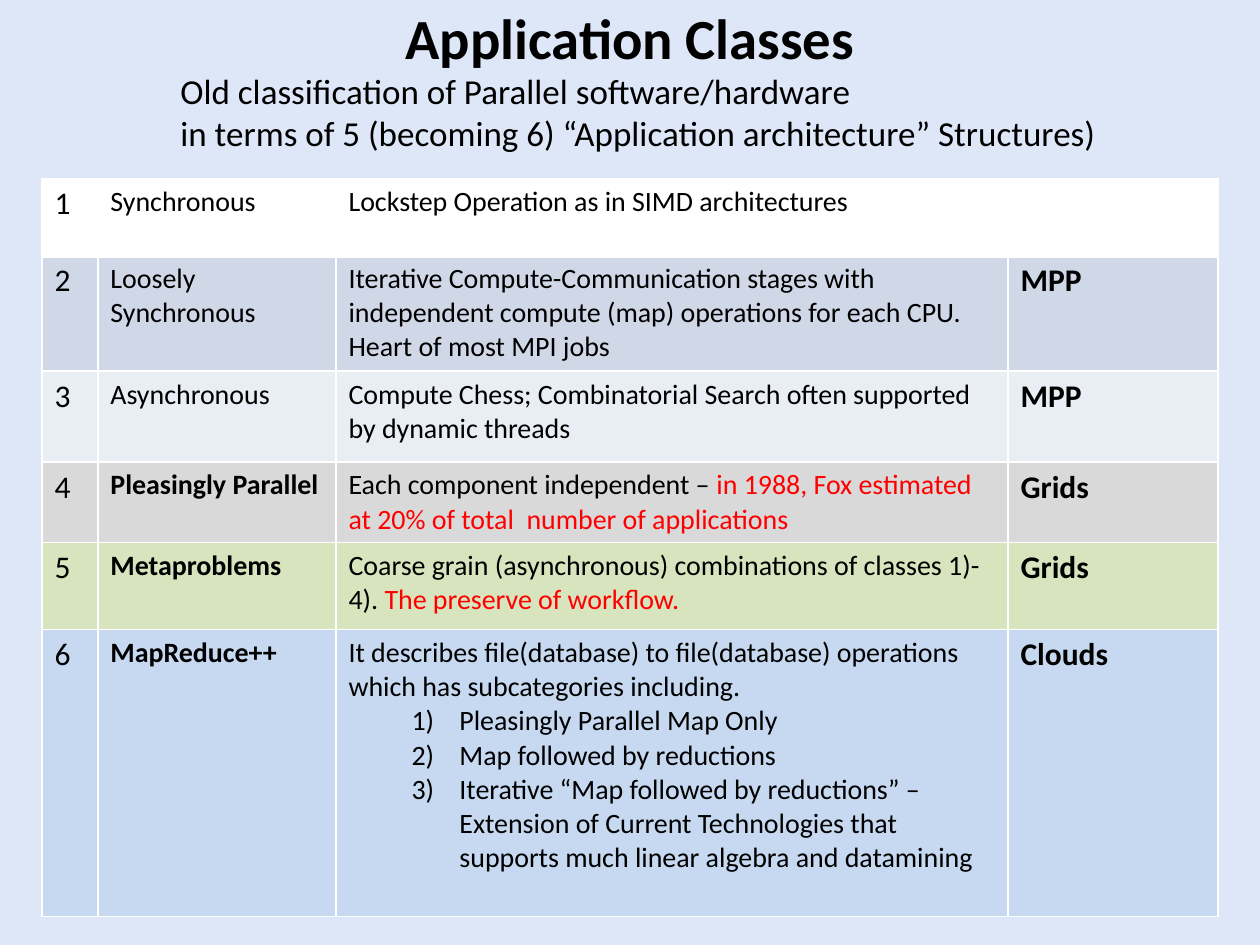
import pptx
import pptx.dml.color
import pptx.enum.text
import pptx.oxml
import pptx.oxml.ns
import pptx.util

COL = pptx.util.Inches(10) / 30
ROW = pptx.util.Inches(7.5) / 45
HUES = {
    "back": "DEE7F8", "ink": "000000", "red": "FF0000", "white": "FFFFFF",
    "blue": "D0D8E8", "pale": "E9EDF4", "gray": "D9D9D9", "green": "D7E4BD",
    "sky": "C6D9F1",
}
COLS = [1.33, 5.67, 16, 5]
ROWS = [3.66, 5.52, 4.32, 3.84, 4.14, 13.68]
KINDS = [
    ("white", "Synchronous", False,
     [[("Lockstep Operation as in SIMD architectures", "ink")]], ""),
    ("blue", "Loosely Synchronous", False,
     [[("Iterative Compute-Communication stages with independent compute (map) "
        "operations for each CPU. Heart of most MPI jobs", "ink")]], "MPP"),
    ("pale", "Asynchronous", False,
     [[("Compute Chess; Combinatorial Search often supported by dynamic threads",
        "ink")]], "MPP"),
    ("gray", "Pleasingly Parallel", True,
     [[("Each component independent – ", "ink"),
       ("in 1988, Fox estimated at 20% of total  number of applications", "red")]],
     "Grids"),
    ("green", "Metaproblems", True,
     [[("Coarse grain (asynchronous) combinations of classes 1)-4). ", "ink"),
       ("The preserve of workflow.", "red")]], "Grids"),
    ("sky", "MapReduce++", True,
     [[("It describes file(database) to file(database) operations which has "
        "subcategories including.", "ink")],
      [("Pleasingly Parallel Map Only", "ink")],
      [("Map followed by reductions", "ink")],
      [("Iterative “Map followed by reductions” – Extension of Current "
        "Technologies that supports much linear algebra and datamining", "ink")]],
     "Clouds"),
]


def wide(cols):
    """Turn grid columns into a length."""
    return pptx.util.Emu(round(cols * COL))


def tall(rows):
    """Turn grid rows into a length."""
    return pptx.util.Emu(round(rows * ROW))


def tint(name):
    """Return the colour of that name."""
    return pptx.dml.color.RGBColor.from_string(HUES[name])


def add_run(para, text, size, bold=False, hue="ink"):
    """Add one styled run to a paragraph."""
    run = para.add_run()
    run.text = text
    font = run.font
    font.name, font.size, font.bold = "Calibri", pptx.util.Pt(size), bold
    font.color.rgb = tint(hue)


def add_node(host, tag, **attrs):
    """Append a drawing element to its host."""
    node = pptx.oxml.parse_xml(f"<a:{tag} {pptx.oxml.ns.nsdecls('a')}/>")
    for key, val in attrs.items():
        node.set(key, str(val))
    host.append(node)
    return node


def add_text(slide, spot, lines, size, bold=False, align="LEFT", anchor="TOP"):
    """Add a text box of lines at a grid spot."""
    left, top, width, height = spot
    box = slide.shapes.add_textbox(wide(left), tall(top), wide(width), tall(height))
    frame = box.text_frame
    frame.word_wrap = True
    frame.vertical_anchor = pptx.enum.text.MSO_ANCHOR[anchor]
    for i, line in enumerate(lines):
        para = frame.add_paragraph() if i else frame.paragraphs[0]
        para.alignment = pptx.enum.text.PP_ALIGN[align]
        add_run(para, line, size, bold)


def set_edge(cell, foot):
    """Draw white borders around a cell, with its own foot width."""
    props = cell._tc.get_or_add_tcPr()
    for tag, size in (("lnL", 1), ("lnR", 1), ("lnT", 1), ("lnB", foot)):
        line = add_node(props, tag, w=pptx.util.Pt(size))
        add_node(add_node(line, "solidFill"), "srgbClr", val=HUES["white"])


def set_list(para):
    """Number a paragraph with a hanging indent."""
    para.level = 1
    props = para._p.get_or_add_pPr()
    props.set("marL", str(pptx.util.Inches(0.88)))
    props.set("indent", str(pptx.util.Inches(-0.38)))
    add_node(props, "buFont", typeface="+mj-lt")
    add_node(props, "buAutoNum", type="arabicParenR")


def fill_cell(cell, paras, size, bold, hue, foot):
    """Fill a cell with paragraphs, numbering all after the first."""
    set_edge(cell, foot)
    cell.fill.solid()
    cell.fill.fore_color.rgb = tint(hue)
    frame = cell.text_frame
    for i, runs in enumerate(paras):
        para = frame.add_paragraph() if i else frame.paragraphs[0]
        if i:
            set_list(para)
        for text, ink in runs:
            if text:
                add_run(para, text, size, bold, ink)


def add_grid(slide):
    """Add the table of application classes."""
    table = slide.shapes.add_table(
        len(ROWS), len(COLS), wide(1), tall(8.5), wide(sum(COLS)), tall(sum(ROWS))
    ).table
    table.first_row = table.horz_banding = False
    for col, width in zip(table.columns, COLS):
        col.width = wide(width)
    for i, (hue, name, bold, about, host) in enumerate(KINDS):
        table.rows[i].height = tall(ROWS[i])
        parts = [
            ([[(str(i + 1), "ink")]], 18, False),
            ([[(name, "ink")]], 16, bold),
            (about, 16, False),
            ([[(host, "ink")]], 18, True),
        ]
        for j, (paras, size, heavy) in enumerate(parts):
            fill_cell(table.cell(i, j), paras, size, heavy, hue, 1 if i else 3)


def main():
    """Build the slide and save it."""
    deck = pptx.Presentation()
    deck.slide_width, deck.slide_height = wide(30), tall(45)
    slide = deck.slides.add_slide(deck.slide_layouts[6])
    slide.background.fill.solid()
    slide.background.fill.fore_color.rgb = tint("back")
    add_text(slide, (0, 0, 30, 3.5), ["Application Classes"], 32.4, True,
             "CENTER", "MIDDLE")
    add_grid(slide)
    add_text(slide, (4, 3, 22.83, 4.62),
             ["Old classification of Parallel software/hardware",
              "in terms of 5 (becoming 6) “Application architecture” Structures)"], 20)
    deck.save("out.pptx")


if __name__ == "__main__":
    main()
